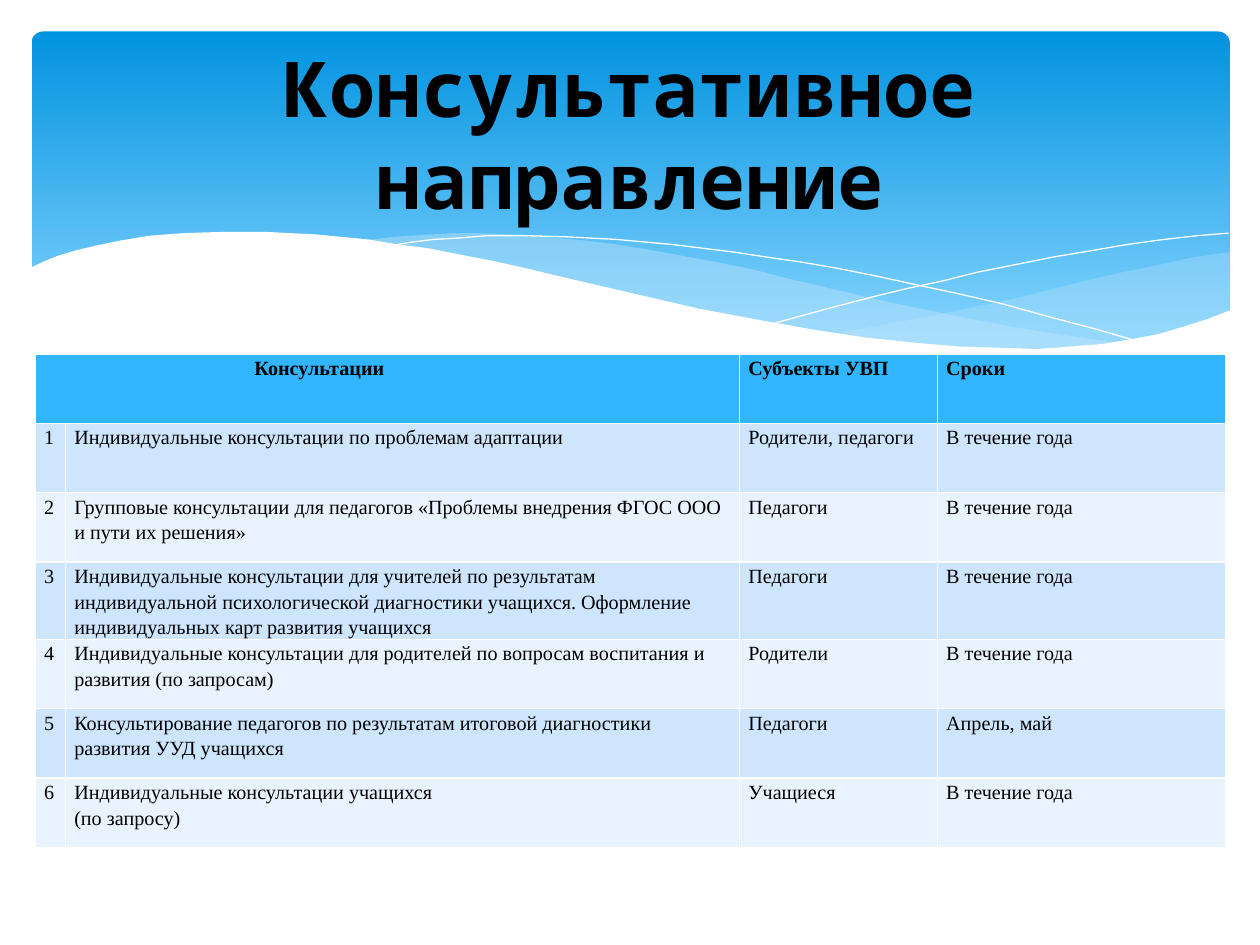
from lxml import etree
from pptx import Presentation
from pptx.dml.color import RGBColor
from pptx.enum.shapes import MSO_SHAPE
from pptx.enum.text import MSO_ANCHOR, MSO_AUTO_SIZE, PP_ALIGN
from pptx.oxml.ns import qn
from pptx.util import Inches, Pt

ROUNDED = MSO_SHAPE.ROUNDED_RECTANGLE
MIDDLE = MSO_ANCHOR.MIDDLE
NO_AUTOFIT = MSO_AUTO_SIZE.NONE
LEFT, CENTER = PP_ALIGN.LEFT, PP_ALIGN.CENTER

WHITE = RGBColor(0xFF, 0xFF, 0xFF)
BLACK = RGBColor(0, 0, 0)
SKY_TOP = RGBColor(0x02, 0x93, 0xE0)
SKY_BOTTOM = RGBColor(0x83, 0xD3, 0xFE)
FOAM = RGBColor(0xC6, 0xE7, 0xFC)
HEADER_BLUE = RGBColor(0x31, 0xB6, 0xFD)
BANDS = (RGBColor(0xCE, 0xE5, 0xFE), RGBColor(0xE8, 0xF3, 0xFF))

RIGHT_WAVE = [
    (9.76, 2), (9.48, 2.04), (9.21, 2.1), (8.91, 2.16), (8.61, 2.23), (8.05, 2.37),
    (7.53, 2.48), (7.06, 2.57), (6.61, 2.65), (6.91, 2.69), (7.19, 2.72), (7.45, 2.75),
    (7.69, 2.77), (8.03, 2.78), (8.35, 2.77), (8.63, 2.75), (8.89, 2.72), (9.13, 2.67),
    (9.35, 2.62), (9.49, 2.57), (9.63, 2.52), (9.76, 2.47),
]
LONG_WAVE = [
    (8.93, 2.73), (8.66, 2.69), (8.37, 2.65), (8.07, 2.6), (7.75, 2.54), (7.41, 2.47),
    (7.06, 2.4), (6.68, 2.31), (6.29, 2.22), (5.98, 2.14), (5.69, 2.08), (5.41, 2.03),
    (5.14, 1.98), (4.89, 1.94), (4.65, 1.91), (4.42, 1.89), (4.2, 1.87), (3.99, 1.86),
    (3.8, 1.85), (3.61, 1.85), (3.44, 1.86), (3.13, 1.88), (2.86, 1.91), (3.23, 1.96),
    (3.62, 2.03), (4.04, 2.11), (4.49, 2.22), (4.91, 2.32), (5.3, 2.4), (5.66, 2.48),
    (6.01, 2.55), (6.34, 2.61), (6.65, 2.66), (6.95, 2.7), (7.22, 2.74), (7.48, 2.76),
    (7.73, 2.77), (7.96, 2.78), (8.28, 2.78), (8.57, 2.77), (8.76, 2.75),
]
FALLING_CREST = [
    (3.09, 1.95), (3.28, 1.92), (3.44, 1.9), (3.63, 1.89), (3.87, 1.87), (4.16, 1.87),
    (4.5, 1.88), (4.89, 1.9), (5.33, 1.94), (5.82, 2), (6.08, 2.04), (6.36, 2.08),
    (6.65, 2.13), (6.95, 2.19), (7.27, 2.26), (7.6, 2.33), (7.95, 2.41), (8.31, 2.51),
    (8.69, 2.61), (9.07, 2.72),
]
RISING_CREST = [
    (6.13, 2.57), (6.53, 2.46), (6.95, 2.35), (7.2, 2.29), (7.48, 2.23), (7.76, 2.16),
    (8.06, 2.1), (8.36, 2.04), (8.66, 1.99), (8.95, 1.94), (9.24, 1.9), (9.51, 1.87),
    (9.75, 1.85),
]
WHITE_WAVE = [
    (9.77, 2.46), (9.59, 2.53), (9.4, 2.59), (9.2, 2.65), (8.99, 2.69), (8.75, 2.73),
    (8.5, 2.75), (8.23, 2.77), (7.93, 2.76), (7.61, 2.75), (7.26, 2.72), (6.88, 2.68),
    (6.48, 2.62), (6.03, 2.54), (5.55, 2.45), (5.03, 2.33), (4.47, 2.2), (4.18, 2.13),
    (3.91, 2.07), (3.65, 2.02), (3.4, 1.97), (3.16, 1.94), (2.92, 1.9), (2.71, 1.88),
    (2.5, 1.86), (2.3, 1.85), (2.11, 1.84), (1.77, 1.84), (1.46, 1.85), (1.19, 1.87),
    (0.95, 1.91), (0.76, 1.95), (0.59, 1.99), (0.46, 2.03), (0.36, 2.07), (0.23, 2.13),
    (0.23, 3.29), (9.77, 3.29),
]

COLUMN_WIDTHS = (0.24, 5.35, 1.57, 2.29)
ROW_HEIGHT = 0.55
HEADINGS = ("Консультации", "", "Субъекты УВП", "Сроки")
ALL_YEAR = "В течение года"
CONSULTATIONS = (
    ("Индивидуальные консультации по проблемам адаптации", "Родители, педагоги", ALL_YEAR),
    ("Групповые консультации для педагогов «Проблемы внедрения ФГОС ООО и пути их решения»",
     "Педагоги", ALL_YEAR),
    ("Индивидуальные консультации для учителей по результатам индивидуальной "
     "психологической диагностики учащихся. Оформление индивидуальных карт развития учащихся",
     "Педагоги", ALL_YEAR),
    ("Индивидуальные консультации для родителей по вопросам воспитания и развития "
     "(по запросам)", "Родители", ALL_YEAR),
    ("Консультирование педагогов по результатам итоговой диагностики развития УУД учащихся",
     "Педагоги", "Апрель, май"),
    ("Индивидуальные консультации учащихся\n(по запросу)", "Учащиеся", ALL_YEAR),
)


def write_text(frame, text, *, font, size, bold=False, align=LEFT, spacing=None):
    """Fill a text frame with evenly formatted paragraphs."""
    frame.text = text
    for paragraph in frame.paragraphs:
        paragraph.alignment = align
        paragraph.line_spacing = spacing
        for run in paragraph.runs:
            run.font.name = font
            run.font.size = Pt(size)
            run.font.bold = bold
            run.font.color.rgb = BLACK


def add_sky(slide):
    """Add the rounded gradient panel behind the title."""
    sky = slide.shapes.add_shape(ROUNDED, Inches(0.25), Inches(0.25), Inches(9.51), Inches(2.7))
    sky.adjustments[0] = 0.034
    sky.shadow.inherit = False
    sky.line.fill.background()
    sky.fill.gradient()
    sky.fill.gradient_angle = 270
    stops = ((0, SKY_TOP), (0.9, SKY_BOTTOM))
    for stop, (position, color) in zip(sky.fill.gradient_stops, stops):
        stop.position = position
        stop.color.rgb = color


def draw_outline(slide, points, closed):
    """Draw a freeform through points given in inches."""
    start, *rest = [(Inches(x), Inches(y)) for x, y in points]
    builder = slide.shapes.build_freeform(*start)
    builder.add_line_segments(rest, close=closed)
    outline = builder.convert_to_shape()
    outline.shadow.inherit = False
    return outline


def add_wave(slide, points, color, opacity=100):
    """Add a filled wave with the given opacity in percent."""
    wave = draw_outline(slide, points, True)
    wave.line.fill.background()
    wave.fill.solid()
    wave.fill.fore_color.rgb = color
    if opacity < 100:
        tint = wave.element.spPr.find(qn("a:solidFill"))[0]
        etree.SubElement(tint, qn("a:alpha")).set("val", str(opacity * 1000))


def add_crest(slide, points):
    """Add a thin white wave line."""
    crest = draw_outline(slide, points, False)
    crest.fill.background()
    crest.line.color.rgb = WHITE
    crest.line.width = Pt(0)


def add_schedule(slide):
    """Add the table of consultations, their subjects and dates."""
    rows = [HEADINGS]
    rows += [(str(number), *entry) for number, entry in enumerate(CONSULTATIONS, 1)]
    schedule = slide.shapes.add_table(
        len(rows), len(COLUMN_WIDTHS), Inches(0.28), Inches(2.81),
        Inches(sum(COLUMN_WIDTHS)), Inches(ROW_HEIGHT * len(rows))).table
    for column, width in zip(schedule.columns, COLUMN_WIDTHS):
        column.width = Inches(width)
    for row_index, row in enumerate(rows):
        is_header = row_index == 0
        schedule.rows[row_index].height = Inches(ROW_HEIGHT)
        for column_index, text in enumerate(row):
            cell = schedule.cell(row_index, column_index)
            cell.margin_left = cell.margin_right = Inches(0.07)
            cell.margin_top = cell.margin_bottom = 0
            cell.fill.solid()
            cell.fill.fore_color.rgb = HEADER_BLUE if is_header else BANDS[(row_index - 1) % 2]
            write_text(cell.text_frame, text, font="Times New Roman", size=11.5,
                       bold=is_header, spacing=1.15)
    heading = schedule.cell(0, 0)
    heading.merge(schedule.cell(0, 1))
    heading.margin_left = Inches(1.74)


def add_title(slide):
    """Place the title in front of the waves."""
    title = slide.shapes.title
    title.left, title.top = Inches(0.5), Inches(0.37)
    title.width, title.height = Inches(9), Inches(1.37)
    frame = title.text_frame
    frame.word_wrap = True
    frame.auto_size = NO_AUTOFIT
    frame.vertical_anchor = MIDDLE
    write_text(frame, "Консультативное направление", font="Noto Sans Mono", size=44,
               bold=True, align=CENTER)
    slide.shapes.element.append(title.element)


def main():
    """Build the slide and save it."""
    presentation = Presentation()
    presentation.slide_width, presentation.slide_height = Inches(10), Inches(7.5)
    slide = presentation.slides.add_slide(presentation.slide_layouts[5])
    add_sky(slide)
    add_wave(slide, RIGHT_WAVE, FOAM, 29)
    add_wave(slide, LONG_WAVE, FOAM, 40)
    add_crest(slide, FALLING_CREST)
    add_crest(slide, RISING_CREST)
    add_wave(slide, WHITE_WAVE, WHITE)
    add_schedule(slide)
    add_title(slide)
    presentation.save("out.pptx")


if __name__ == "__main__":
    main()
